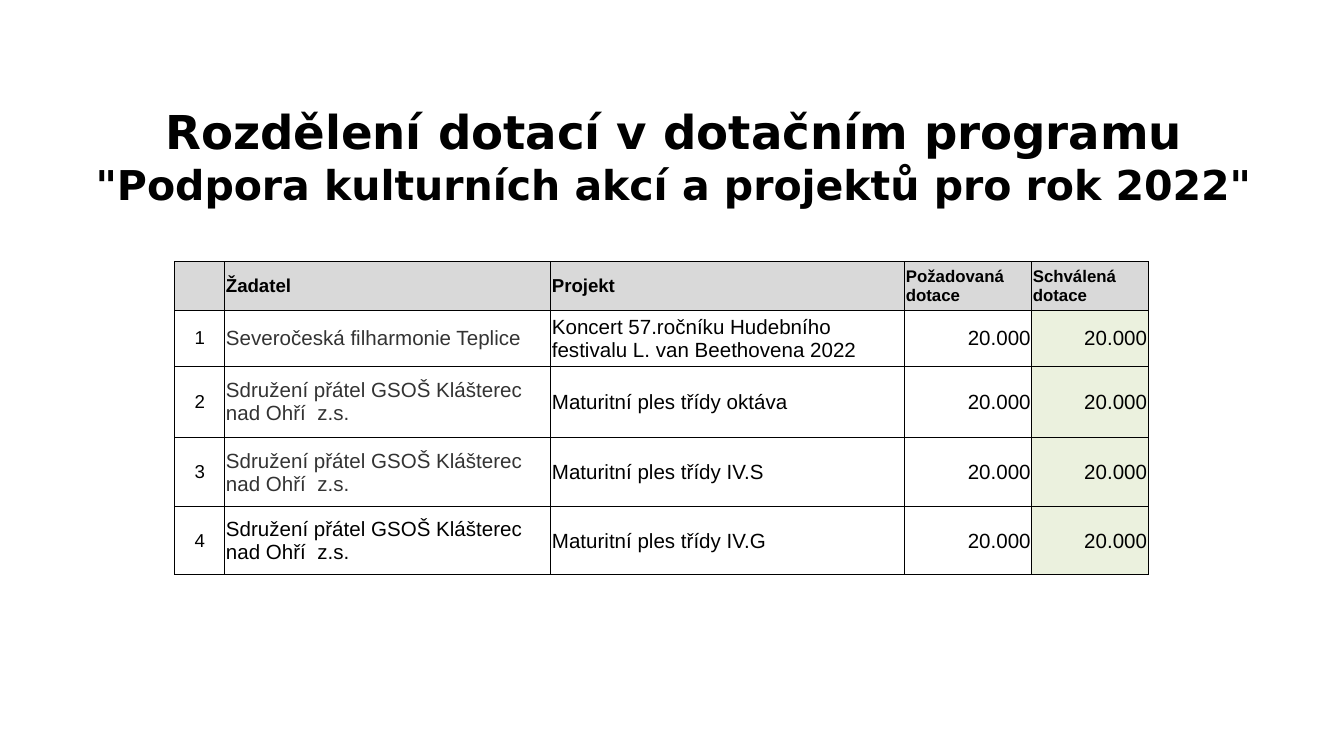
from typing import NamedTuple

from lxml import etree
from pptx import Presentation
from pptx.dml.color import RGBColor
from pptx.enum.text import MSO_ANCHOR, PP_ALIGN
from pptx.oxml.ns import qn
from pptx.util import Cm, Pt

LEFT, CENTER, RIGHT = PP_ALIGN.LEFT, PP_ALIGN.CENTER, PP_ALIGN.RIGHT
MIDDLE = MSO_ANCHOR.MIDDLE

BLACK = RGBColor(0x00, 0x00, 0x00)
DARK_GRAY = RGBColor(0x33, 0x33, 0x33)
HEADER_GRAY = RGBColor(0xD9, 0xD9, 0xD9)
PALE_GREEN = RGBColor(0xEB, 0xF1, 0xDE)
WHITE = RGBColor(0xFF, 0xFF, 0xFF)

TITLE_FONT, TABLE_FONT = "DejaVu Sans", "Arial"
BORDER_WIDTH = Pt(0.5)
CELL_INSET = Cm(0.02)


class Column(NamedTuple):
    heading: str
    width: float
    heading_size: int
    size: int
    align: PP_ALIGN
    fill: RGBColor


class Grant(NamedTuple):
    applicant: str
    project: str
    height: float
    applicant_color: RGBColor = DARK_GRAY
    requested: str = "20.000"
    approved: str = "20.000"


HEADER_HEIGHT = 0.91
COLUMNS = [
    Column("", 0.95, 10, 10, CENTER, WHITE),
    Column("Žadatel", 6.16, 10, 11, LEFT, WHITE),
    Column("Projekt", 6.69, 10, 11, LEFT, WHITE),
    Column("Požadovaná dotace", 2.4, 9, 11, RIGHT, WHITE),
    Column("Schválená dotace", 2.2, 9, 11, RIGHT, PALE_GREEN),
]
SCHOOL_FRIENDS = "Sdružení přátel GSOŠ Klášterec nad Ohří  z.s."
GRANTS = [
    Grant("Severočeská filharmonie Teplice",
          "Koncert 57.ročníku Hudebního festivalu L. van Beethovena 2022", 1.06),
    Grant(SCHOOL_FRIENDS, "Maturitní ples třídy oktáva", 1.34),
    Grant(SCHOOL_FRIENDS, "Maturitní ples třídy IV.S", 1.32),
    Grant(SCHOOL_FRIENDS, "Maturitní ples třídy IV.G", 1.27, BLACK),
]


def format_span(span, font: str, size: int, color: RGBColor, bold: bool) -> None:
    span.font.name = font
    span.font.size = Pt(size)
    span.font.color.rgb = color
    span.font.bold = bold


def add_borders(cell) -> None:
    """Draw all four sides; the lines must precede the fill in the cell XML."""
    properties = cell._tc.get_or_add_tcPr()
    for index, side in enumerate(("a:lnL", "a:lnR", "a:lnT", "a:lnB")):
        line = etree.Element(qn(side), w=str(BORDER_WIDTH))
        solid = etree.SubElement(line, qn("a:solidFill"))
        etree.SubElement(solid, qn("a:srgbClr"), val=str(BLACK))
        properties.insert(index, line)


def fill_cell(cell, text: str, size: int, align: PP_ALIGN, fill: RGBColor,
              color: RGBColor = BLACK, bold: bool = False) -> None:
    cell.margin_left = cell.margin_right = cell.margin_top = CELL_INSET
    cell.margin_bottom = 0
    cell.vertical_anchor = MIDDLE
    cell.fill.solid()
    cell.fill.fore_color.rgb = fill
    add_borders(cell)
    cell.text_frame.text = text
    para = cell.text_frame.paragraphs[0]
    para.alignment = align
    for span in para.runs:
        format_span(span, TABLE_FONT, size, color, bold)


def add_title(page) -> None:
    box = page.shapes.add_textbox(Cm(1.3), Cm(1.75), Cm(22.86), Cm(2.39))
    box.text_frame.word_wrap = True
    box.text_frame.vertical_anchor = MIDDLE
    para = box.text_frame.paragraphs[0]
    para.text = ("Rozdělení dotací v dotačním programu\n"
                 '"Podpora kulturních akcí a projektů pro rok 2022"')
    para.alignment = CENTER
    for span, size in zip(para.runs, (25, 22)):
        format_span(span, TITLE_FONT, size, BLACK, True)


def add_grant_table(page) -> None:
    heights = [HEADER_HEIGHT] + [grant.height for grant in GRANTS]
    width = sum(column.width for column in COLUMNS)
    table = page.shapes.add_table(len(heights), len(COLUMNS), Cm(3.3), Cm(4.95),
                                  Cm(width), Cm(sum(heights))).table
    table.first_row = table.horz_banding = False
    for row, height in zip(table.rows, heights):
        row.height = Cm(height)

    for index, column in enumerate(COLUMNS):
        table.columns[index].width = Cm(column.width)
        fill_cell(table.cell(0, index), column.heading, column.heading_size,
                  LEFT, HEADER_GRAY, bold=True)

    for number, grant in enumerate(GRANTS, start=1):
        values = (str(number), grant.applicant, grant.project,
                  grant.requested, grant.approved)
        for index, (column, value) in enumerate(zip(COLUMNS, values)):
            color = grant.applicant_color if index == 1 else BLACK
            fill_cell(table.cell(number, index), value, column.size,
                      column.align, column.fill, color)


def main() -> None:
    deck = Presentation()
    deck.slide_width, deck.slide_height = Cm(25.4), Cm(14.29)
    page = deck.slides.add_slide(deck.slide_layouts[6])
    add_title(page)
    add_grant_table(page)
    deck.save("out.pptx")


if __name__ == "__main__":
    main()
